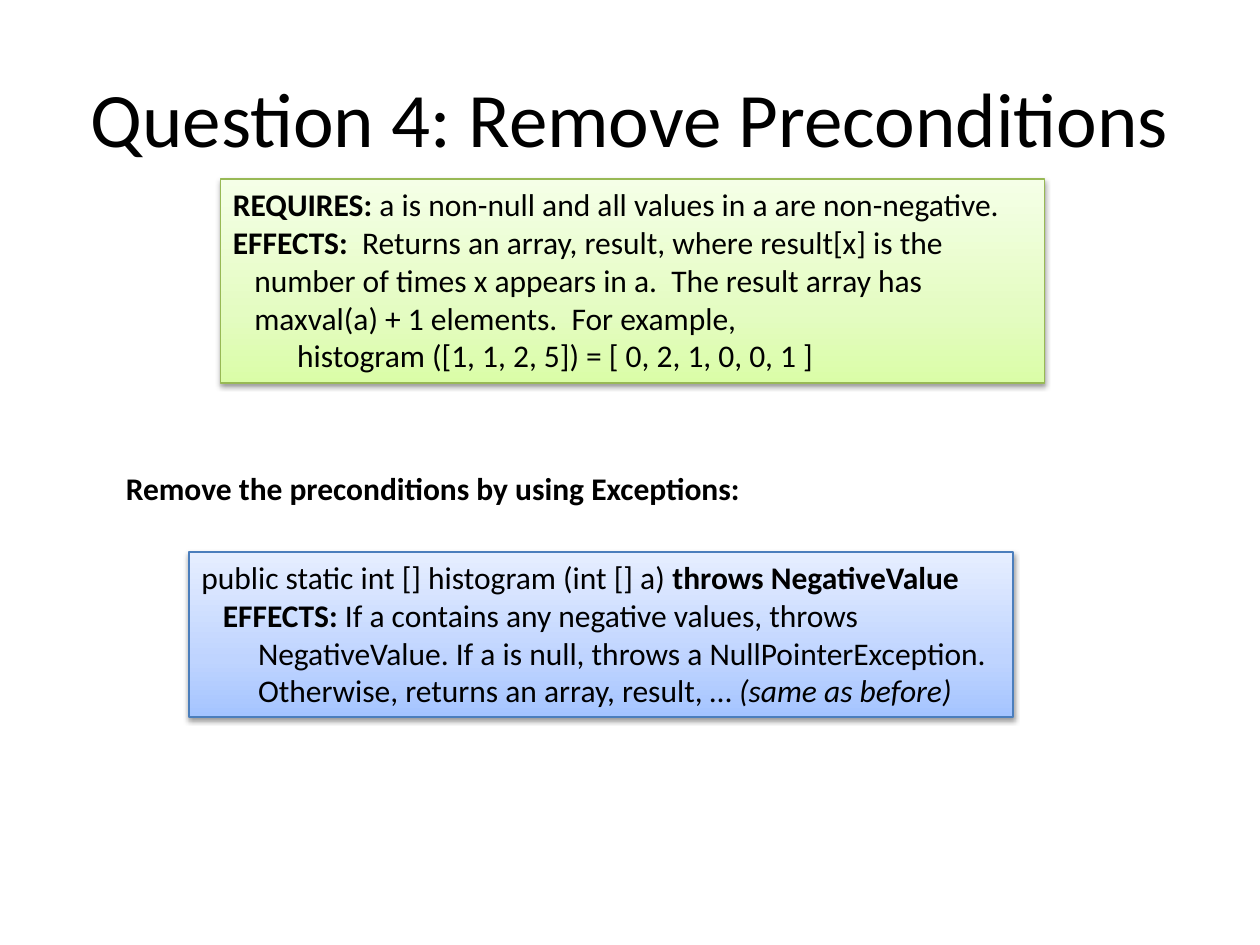
from copy import deepcopy
from dataclasses import dataclass

from lxml.etree import SubElement
from pptx import Presentation
from pptx.dml.color import RGBColor
from pptx.enum.shapes import MSO_SHAPE as Shape
from pptx.enum.text import MSO_ANCHOR as Anchor, MSO_AUTO_SIZE as AutoSize, PP_ALIGN as Align
from pptx.oxml.ns import qn
from pptx.util import Inches, Pt


@dataclass(frozen=True)
class Palette:
    stops: tuple[str, str, str]
    line: str


@dataclass(frozen=True)
class Theme:
    font: str = "Calibri"
    text: str = "000000"
    shadow: str = "000000"
    title_size: int = 44
    body_size: int = 18
    green: Palette = Palette(("DAFDA7", "E4FCC2", "F5FFE7"), "98B955")
    blue: Palette = Palette(("A4C4FF", "BFD4FF", "E6EEFF"), "4B7EBC")


@dataclass(frozen=True)
class Span:
    text: str
    bold: bool = False
    italic: bool = False


@dataclass(frozen=True)
class Line:
    spans: tuple[Span, ...]
    indent: float = 0


@dataclass(frozen=True)
class Box:
    left: float
    top: float
    width: float
    height: float

    def lengths(self) -> tuple:
        return tuple(Inches(value) for value in (self.left, self.top, self.width, self.height))


@dataclass(frozen=True)
class Panel:
    box: Box
    palette: Palette
    lines: tuple[Line, ...]


THEME = Theme()
STOP_POSITIONS = (0, 0.35, 1)

TITLE = Line((Span("Question 4: Remove Preconditions"),))
PROMPT = Line((Span("Remove the preconditions by using Exceptions:", bold=True),))

PANELS = (
    Panel(Box(1.75, 1.42, 6.54, 1.62), THEME.green, (
        Line((Span("REQUIRES: ", bold=True),
              Span("a is non-null and all values in a are non-negative."))),
        Line((Span("EFFECTS: ", bold=True),
              Span(" Returns an array, result, where result[x] is the"))),
        Line((Span("number of times x appears in a.  The result array has"),), 0.17),
        Line((Span("maxval(a) + 1 elements.  For example,"),), 0.17),
        Line((Span("histogram ([1, 1, 2, 5]) = [ 0, 2, 1, 0, 0, 1 ]"),), 0.51),
    )),
    Panel(Box(1.5, 4.38, 6.54, 1.31), THEME.blue, (
        Line((Span("public static int [] histogram (int [] a) "),
              Span("throws NegativeValue", bold=True))),
        Line((Span("EFFECTS: ", bold=True),
              Span("If a contains any negative values, throws")), 0.17),
        Line((Span("NegativeValue. If a is null, throws a NullPointerException."),), 0.45),
        Line((Span("Otherwise, returns an array, result, … "),
              Span("(same as before)", italic=True)), 0.45),
    )),
)


def write_lines(frame, lines: tuple[Line, ...], size: int, align=Align.LEFT) -> None:
    for index, line in enumerate(lines):
        paragraph = frame.add_paragraph() if index else frame.paragraphs[0]
        paragraph.alignment = align
        if line.indent:
            properties = paragraph._p.get_or_add_pPr()
            properties.set("marL", str(Inches(line.indent)))
            properties.set("indent", "0")
        for span in line.spans:
            run = paragraph.add_run()
            run.text = span.text
            run.font.name = THEME.font
            run.font.size = Pt(size)
            run.font.bold = span.bold
            run.font.italic = span.italic
            run.font.color.rgb = RGBColor.from_string(THEME.text)


def apply_gradient(fill, colors: tuple[str, str, str]) -> None:
    fill.gradient()
    fill.gradient_angle = 90
    stop_list = fill._xPr.find(qn("a:gradFill")).find(qn("a:gsLst"))
    stop_list.append(deepcopy(stop_list[0]))
    for stop, position, color in zip(fill.gradient_stops, STOP_POSITIONS, colors):
        stop.position = position
        stop.color.rgb = RGBColor.from_string(color)


def apply_shadow(shape) -> None:
    shape.shadow.inherit = False
    effects = shape._element.spPr.find(qn("a:effectLst"))
    shadow = SubElement(effects, qn("a:outerShdw"), blurRad=str(Pt(3.1)),
                        dist=str(Pt(1.6)), dir="5400000", rotWithShape="0")
    color = SubElement(shadow, qn("a:srgbClr"), val=THEME.shadow)
    SubElement(color, qn("a:alpha"), val="38000")


def add_panel(slide, panel: Panel) -> None:
    shape = slide.shapes.add_shape(Shape.RECTANGLE, *panel.box.lengths())
    apply_gradient(shape.fill, panel.palette.stops)
    shape.line.color.rgb = RGBColor.from_string(panel.palette.line)
    shape.line.width = Pt(0.75)
    apply_shadow(shape)
    frame = shape.text_frame
    frame.word_wrap = True
    frame.auto_size = AutoSize.SHAPE_TO_FIT_TEXT
    frame.vertical_anchor = Anchor.TOP
    write_lines(frame, panel.lines, THEME.body_size)


def add_title(slide) -> None:
    frame = slide.shapes.add_textbox(*Box(0.5, 0.3, 9, 1.25).lengths()).text_frame
    frame.word_wrap = True
    frame.vertical_anchor = Anchor.MIDDLE
    write_lines(frame, (TITLE,), THEME.title_size, Align.CENTER)


def add_prompt(slide) -> None:
    frame = slide.shapes.add_textbox(*Box(0.9, 3.67, 5.11, 0.4).lengths()).text_frame
    frame.word_wrap = False
    frame.auto_size = AutoSize.SHAPE_TO_FIT_TEXT
    write_lines(frame, (PROMPT,), THEME.body_size)


def main() -> None:
    presentation = Presentation()
    presentation.slide_width = Inches(10)
    presentation.slide_height = Inches(7.5)
    slide = presentation.slides.add_slide(presentation.slide_layouts[6])
    requirements, solution = PANELS
    add_title(slide)
    add_panel(slide, requirements)
    add_prompt(slide)
    add_panel(slide, solution)
    presentation.save("out.pptx")


if __name__ == "__main__":
    main()
